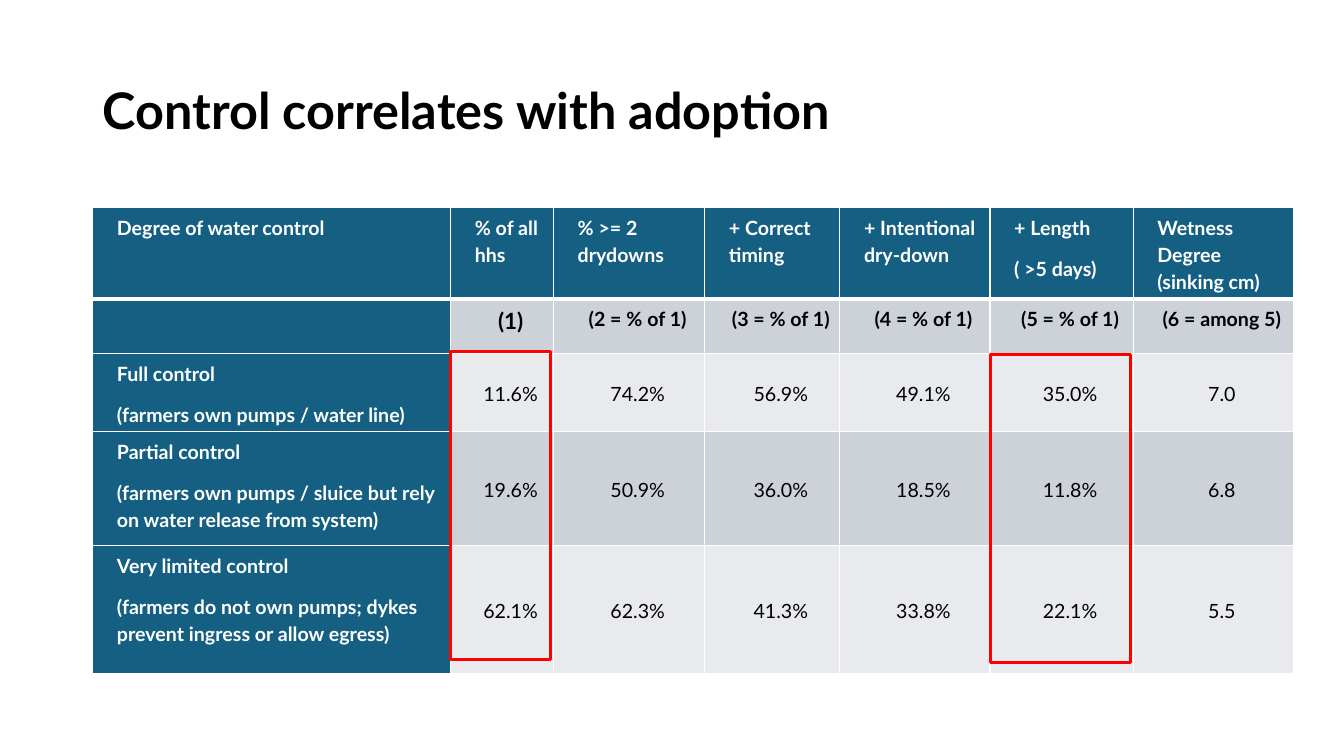
import pptx
import pptx.util
import pptx.dml.color
import pptx.enum.shapes
import pptx.enum.text
import pptx.oxml
import pptx.oxml.ns
from lxml import etree

TITLE = "Control correlates with adoption"
ROWS = [
    ["Degree of water control", "% of all hhs", "% >= 2 drydowns", "+ Correct timing",
     "+ Intentional dry-down", "+ Length\n( >5 days)", "Wetness Degree (sinking cm)"],
    ["", "(1)", "(2 = % of 1)", "(3 = % of 1)", "(4 = % of 1)", "(5 = % of 1)", "(6 = among 5)"],
    ["Full control\n(farmers own pumps / water line)",
     "11.6%", "74.2%", "56.9%", "49.1%", "35.0%", "7.0"],
    ["Partial control\n(farmers own pumps / sluice but rely on water release from system)",
     "19.6%", "50.9%", "36.0%", "18.5%", "11.8%", "6.8"],
    ["Very limited control\n(farmers do not own pumps; dykes prevent ingress or allow egress)",
     "62.1%", "62.3%", "41.3%", "33.8%", "22.1%", "5.5"],
]
COL_WIDTHS = [3.55, 1.02, 1.5, 1.34, 1.49, 1.42, 1.59]
ROW_HEIGHTS = [0.8, 0.54, 0.69, 1.13, 1.27]
LEFT, TOP = 0.92, 2.06
HIGHLIGHTS = [(1, 3.49), (5, 3.52)]
HIGHLIGHT_HEIGHT = 3.05
FONT = "Lato"
COLORS = {"head": "156082", "dark": "CCD2D8", "light": "E8EAED",
          "white": "FFFFFF", "black": "000000", "mark": "FF0000"}

Inches, Pt = pptx.util.Inches, pptx.util.Pt
PP_ALIGN, MSO_ANCHOR = pptx.enum.text.PP_ALIGN, pptx.enum.text.MSO_ANCHOR


def rgb(name):
    return pptx.dml.color.RGBColor.from_string(COLORS[name])


def add_run(p, text, size, color, bold):
    r = p.add_run()
    r.text = text
    r.font.name, r.font.size, r.font.bold = FONT, Pt(size), bold
    r.font.color.rgb = rgb(color)


def add_borders(cell, widths):
    tcPr = cell._tc.get_or_add_tcPr()
    for side, width in widths.items():
        ln = etree.SubElement(tcPr, pptx.oxml.ns.qn("a:ln" + side), w=str(Pt(width)))
        fill = etree.SubElement(ln, pptx.oxml.ns.qn("a:solidFill"))
        etree.SubElement(fill, pptx.oxml.ns.qn("a:srgbClr"), val=COLORS["white"])


def fill_cell(cell, text, row, col):
    is_head = row == 0 or col == 0
    is_value = row > 1 and col > 0
    add_borders(cell, {"L": 1, "R": 1, "T": 3 if row == 1 else 1, "B": 3 if row == 0 else 1})
    cell.fill.solid()
    cell.fill.fore_color.rgb = rgb("head" if is_head else "dark" if row % 2 else "light")
    cell.margin_left = cell.margin_right = Inches(0.07)
    cell.margin_top = cell.margin_bottom = Inches(0.05)
    cell.vertical_anchor = MSO_ANCHOR.MIDDLE if is_value else MSO_ANCHOR.TOP
    if not text:
        return
    tf = cell.text_frame
    for i, line in enumerate(text.split("\n")):
        p = tf.add_paragraph() if i else tf.paragraphs[0]
        pPr = p._p.get_or_add_pPr()
        pPr.set("marL", str(Inches(0.17)))
        pPr.set("indent", "0")
        p.alignment = PP_ALIGN.LEFT if is_head else PP_ALIGN.CENTER
        p.line_spacing, p.space_after = 1.15, Pt(10)
        add_run(p, line, 16 if text == "(1)" else 14,
                "white" if is_head else "black", not is_value)


def add_title(s):
    tf = s.shapes.add_textbox(Inches(LEFT), Inches(0.4), Inches(11.5), Inches(1.45)).text_frame
    tf.word_wrap = True
    tf.vertical_anchor = MSO_ANCHOR.MIDDLE
    p = tf.paragraphs[0]
    p.line_spacing = 0.9
    add_run(p, TITLE, 36, "black", True)


def add_results(s):
    table = s.shapes.add_table(len(ROWS), len(COL_WIDTHS), Inches(LEFT), Inches(TOP),
                               Inches(sum(COL_WIDTHS)), Inches(sum(ROW_HEIGHTS))).table
    for column, width in zip(table.columns, COL_WIDTHS):
        column.width = Inches(width)
    for row, height in zip(table.rows, ROW_HEIGHTS):
        row.height = Inches(height)
    for row, texts in enumerate(ROWS):
        for col, text in enumerate(texts):
            fill_cell(table.cell(row, col), text, row, col)


def add_highlight(s, col, top):
    sp = s.shapes.add_shape(pptx.enum.shapes.MSO_SHAPE.RECTANGLE,
                            Inches(LEFT + sum(COL_WIDTHS[:col])), Inches(top),
                            Inches(COL_WIDTHS[col] - 0.03), Inches(HIGHLIGHT_HEIGHT))
    sp.shadow.inherit = False
    sp.fill.background()
    sp.line.color.rgb = rgb("mark")
    sp.line.width = Pt(2.25)


def main():
    prs = pptx.Presentation()
    prs.slide_width, prs.slide_height = Inches(13.33), Inches(7.5)
    s = prs.slides.add_slide(prs.slide_layouts[6])
    add_title(s)
    add_results(s)
    for col, top in HIGHLIGHTS:
        add_highlight(s, col, top)
    prs.save("out.pptx")


if __name__ == "__main__":
    main()
